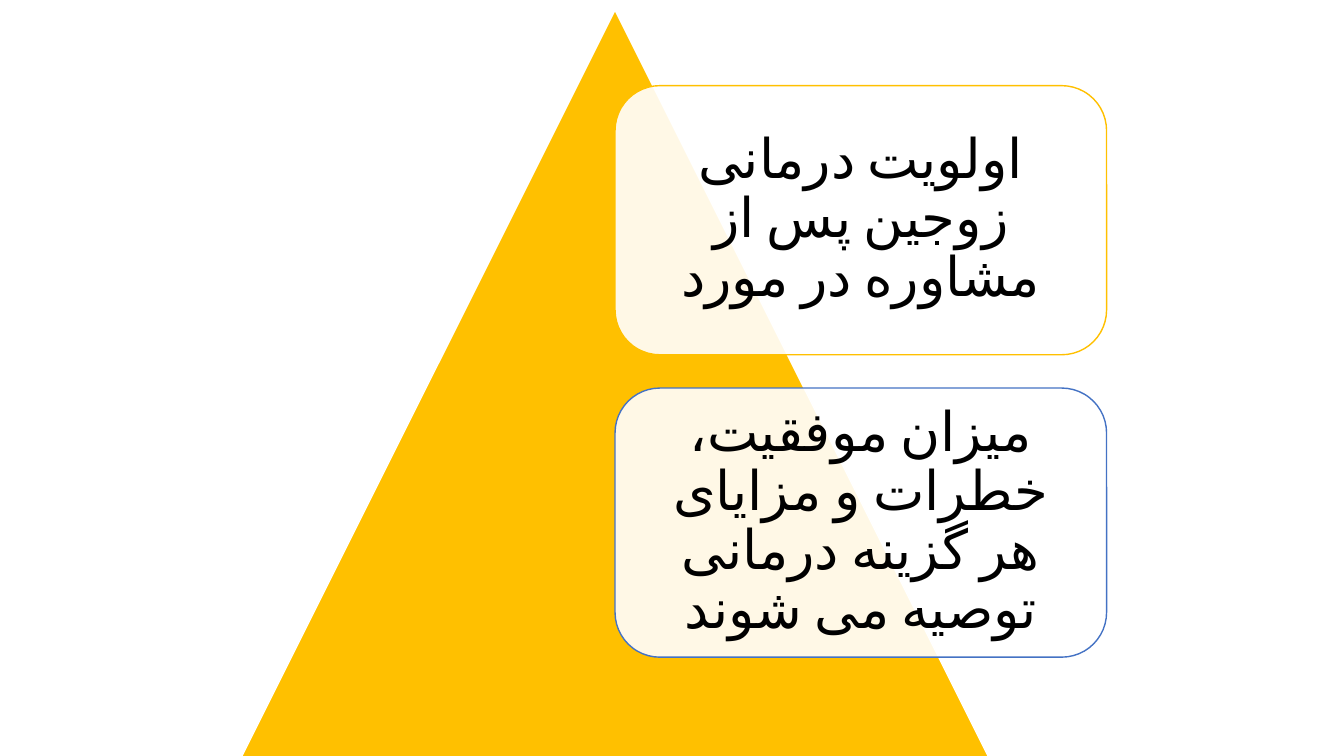
from lxml.etree import SubElement
from pptx import Presentation
from pptx.dml.color import RGBColor
from pptx.enum.shapes import MSO_SHAPE
from pptx.enum.text import MSO_ANCHOR, PP_ALIGN
from pptx.oxml.ns import qn
from pptx.util import Inches, Pt

GOLD = RGBColor(0xFF, 0xC0, 0x00)
BLUE = RGBColor(0x44, 0x72, 0xC4)
WHITE = RGBColor(0xFF, 0xFF, 0xFF)
BLACK = RGBColor(0, 0, 0)
FACE = "Calibri"
INSET = Inches(0.16)
FRAME = {
    "word_wrap": True, "vertical_anchor": MSO_ANCHOR.MIDDLE,
    "margin_left": INSET, "margin_right": INSET,
    "margin_top": INSET, "margin_bottom": INSET,
}
PARA = {"alignment": PP_ALIGN.CENTER, "line_spacing": 0.9}
FONT = {"name": FACE, "size": Pt(39)}
CARDS = [
    ("اولویت درمانی زوجین پس از مشاوره در مورد", GOLD),
    ("میزان موفقیت، خطرات و مزایای هر گزینه درمانی توصیه می شوند", BLUE),
]


def style(item, values):
    for name, value in values.items():
        setattr(item, name, value)


def add_form(slide, kind, box, fill, line):
    form = slide.shapes.add_shape(kind, *map(Inches, box))
    form.shadow.inherit = False
    form.fill.solid()
    form.fill.fore_color.rgb = fill
    form.line.color.rgb = line
    form.line.width = Pt(1)
    return form


def add_card(slide, box, text, line):
    card = add_form(slide, MSO_SHAPE.ROUNDED_RECTANGLE, box, WHITE, line)
    color = card.fill._xPr.find(qn("a:solidFill"))[0]
    SubElement(color, qn("a:alpha"), val="90000")
    frame = card.text_frame
    style(frame, FRAME)
    para = frame.paragraphs[0]
    style(para, PARA)
    para._p.get_or_add_pPr().set("rtl", "1")
    run = para.add_run()
    run.text = text
    style(run.font, FONT)
    run.font.color.rgb = BLACK
    props = run._r.get_or_add_rPr()
    props.set("lang", "fa-IR")
    SubElement(props, qn("a:cs"), typeface=FACE)


def add_pyramid(slide, left, top, size):
    add_form(slide, MSO_SHAPE.ISOSCELES_TRIANGLE,
             (left, top, size, size), GOLD, WHITE)
    for index, (text, line) in enumerate(CARDS):
        box = (left + size / 2, top + 0.75 + index * 3, size * 0.65, 2.67)
        add_card(slide, box, text, line)


def main():
    deck = Presentation()
    deck.slide_width = Inches(13.33)
    deck.slide_height = Inches(7.5)
    slide = deck.slides.add_slide(deck.slide_layouts[6])
    add_pyramid(slide, 2.35, 0.1, 7.5)
    deck.save("out.pptx")


if __name__ == "__main__":
    main()
